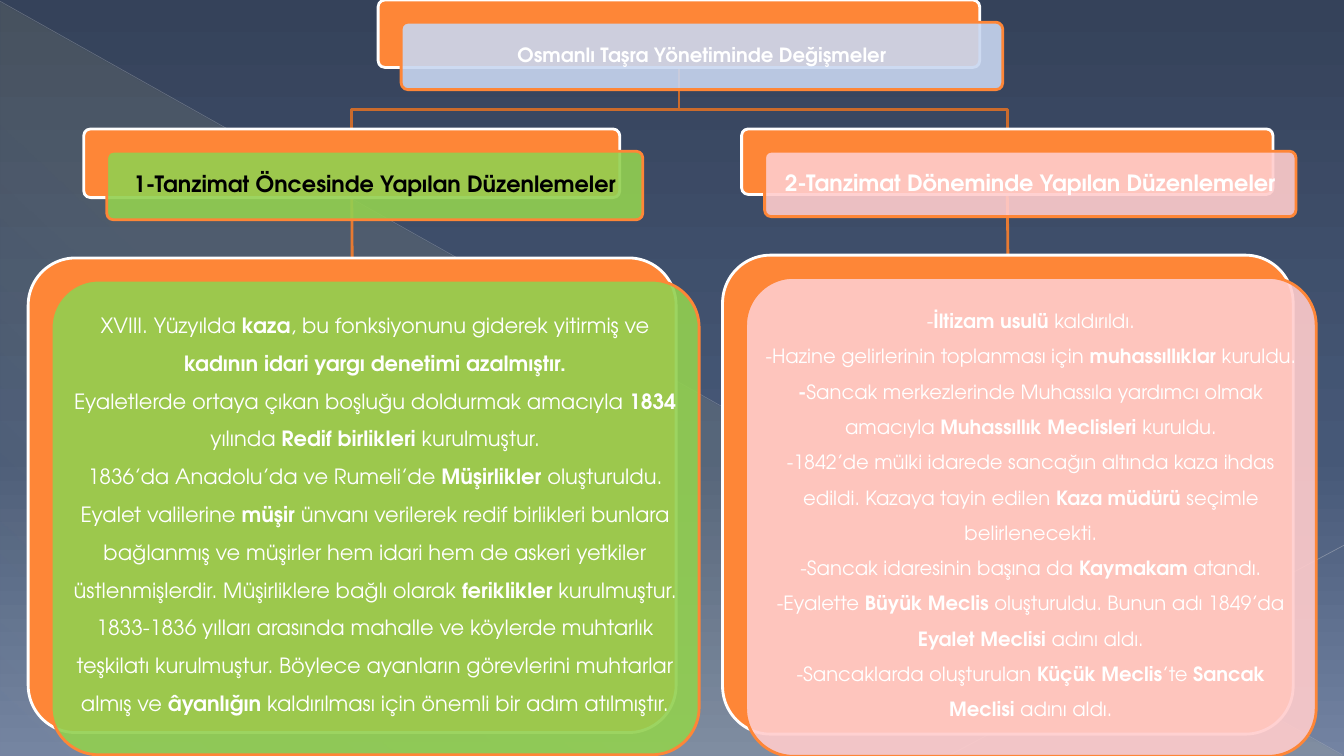
from lxml import etree
from pptx import Presentation
from pptx.dml.color import RGBColor
from pptx.enum import shapes, text
from pptx.oxml import ns
from pptx.util import Cm, Pt

FONT = "TeX Gyre Adventor"
COLORS = {
    "orange": "FE8637", "white": "FFFFFF", "black": "000000", "blue": "C8D6F0",
    "green": "92D050", "pink": "FFCCCC", "upper_link": "CB6B2C", "lower_link": "E77A32",
    "long_line": "BABDC4", "short_line": "C1C4CA",
}
# Gradient stops: position %, colour, opacity %
BACKGROUND = [(0, "35425A", 100), (60, "465877", 100), (100, "7383A2", 100)]
CORNER = [(0, "FFF39D", 10), (70, "FFF39D", 8), (100, "FFF39D", 1)]

# Content: asterisks enclose bold words, boxes are (left, top, width, height) in cm
TITLE = "*Osmanlı Taşra Yönetiminde Değişmeler*"
TITLE_BOX = (9.53, 0, 15.16, 1.7)
BRANCHES = [
    {
        "heading": "*1-Tanzimat Öncesinde Yapılan Düzenlemeler*",
        "heading_box": (2.11, 3.25, 13.51, 1.73), "heading_color": "black",
        "body_box": (0.71, 6.5, 16.33, 11.96), "fill": "green", "size": 15,
        "body": [
            "XVIII. Yüzyılda *kaza*, bu fonksiyonunu giderek yitirmiş ve "
            "*kadının idari yargı denetimi azalmıştır.*",
            "Eyaletlerde ortaya çıkan boşluğu doldurmak amacıyla *1834* yılında "
            "*Redif birlikleri *kurulmuştur.",
            "1836’da Anadolu’da ve Rumeli’de *Müşirlikler *oluşturuldu. Eyalet valilerine "
            "*müşir *ünvanı verilerek redif birlikleri bunlara bağlanmış ve müşirler hem "
            "idari hem de askeri yetkiler üstlenmişlerdir. Müşirliklere bağlı olarak "
            "*feriklikler *kurulmuştur.",
            "1833-1836 yılları arasında mahalle ve köylerde muhtarlık teşkilatı kurulmuştur. "
            "Böylece ayanların görevlerini muhtarlar almış ve *âyanlığın* kaldırılması için "
            "önemli bir adım atılmıştır.",
        ],
    },
    {
        "heading": "*2-Tanzimat Döneminde Yapılan Düzenlemeler*",
        "heading_box": (18.69, 3.25, 13.39, 1.65), "heading_color": "white",
        "body_box": (18.21, 6.43, 14.38, 12.07), "fill": "pink", "size": 14,
        "body": [
            "-*İltizam usulü* kaldırıldı.",
            "-Hazine gelirlerinin toplanması için *muhassıllıklar* kuruldu.",
            "*-*Sancak merkezlerinde Muhassıla yardımcı olmak amacıyla "
            "*Muhassıllık Meclisleri* kuruldu.",
            "-1842’de mülki idarede sancağın altında kaza ihdas edildi. Kazaya tayin edilen "
            "*Kaza müdürü *seçimle belirlenecekti.",
            "-Sancak idaresinin başına da *Kaymakam* atandı.",
            "-Eyalette *Büyük Meclis* oluşturuldu. Bunun adı 1849’da *Eyalet Meclisi* adını aldı.",
            "-Sancaklarda oluşturulan *Küçük Meclis*’te *Sancak Meclisi* adını aldı.",
        ],
    },
]
SLIDE_W, SLIDE_H = 33.87, 19.05
OFFSET_X, OFFSET_Y = 0.58, 0.56
BEND_Y = 2.77


def rgb(name):
    return RGBColor.from_string(COLORS[name])


def set_opacity(fill_parent, percent):
    color = fill_parent.find(ns.qn("a:solidFill"))[0]
    etree.SubElement(color, ns.qn("a:alpha")).set("val", str(percent * 1000))


def set_gradient(fill, parent, stops, angle):
    fill.gradient()
    grad = parent.find(ns.qn("a:gradFill"))
    for child in list(grad):
        grad.remove(child)
    stop_list = etree.SubElement(grad, ns.qn("a:gsLst"))
    for position, color, opacity in stops:
        stop = etree.SubElement(stop_list, ns.qn("a:gs"), pos=str(position * 1000))
        value = etree.SubElement(stop, ns.qn("a:srgbClr"), val=color)
        etree.SubElement(value, ns.qn("a:alpha"), val=str(opacity * 1000))
    etree.SubElement(grad, ns.qn("a:lin"), ang=str(angle * 60000), scaled="0")


def write(shape, paragraphs, size, color="white", spacing=0.9, inset=0.15,
          anchor=text.MSO_ANCHOR.MIDDLE):
    frame = shape.text_frame
    frame.word_wrap = True
    frame.auto_size = text.MSO_AUTO_SIZE.NONE
    frame.vertical_anchor = anchor
    frame.margin_left = frame.margin_right = Cm(inset)
    frame.margin_top = frame.margin_bottom = Cm(inset)
    for index, line in enumerate(paragraphs):
        para = frame.paragraphs[0] if index == 0 else frame.add_paragraph()
        para.alignment = text.PP_ALIGN.CENTER
        para.line_spacing = spacing
        para.space_before = para.space_after = Pt(0)
        for number, part in enumerate(line.split("*")):
            if part:
                run = para.add_run()
                run.text = part
                run.font.name, run.font.size = FONT, Pt(size)
                run.font.bold = number % 2 == 1
                run.font.color.rgb = rgb(color)


def rounded(box, fill, line):
    card = slide.shapes.add_shape(shapes.MSO_SHAPE.ROUNDED_RECTANGLE, *map(Cm, box))
    card.adjustments[0] = 0.1
    card.shadow.inherit = False
    card.fill.solid()
    card.fill.fore_color.rgb = rgb(fill)
    card.line.color.rgb = rgb(line)
    card.line.width = Pt(2)
    return card


def layered(box, fill):
    """Draws the orange card and the translucent one in front, which it returns."""
    rounded(box, "orange", "white")
    left, top, width, height = box
    front = rounded((left + OFFSET_X, top + OFFSET_Y, width, height), fill, "orange")
    set_opacity(front._element.spPr, 90)
    return front


def straight(start, end, color, width, opacity=100):
    line = slide.shapes.add_connector(
        shapes.MSO_CONNECTOR.STRAIGHT, *map(Cm, start + end))
    line.line.color.rgb = rgb(color)
    line.line.width = Pt(width)
    set_opacity(line.line._ln, opacity)
    etree.SubElement(line._element.spPr, ns.qn("a:effectLst"))


def elbow(start, end):
    points = [(start[0], BEND_Y), (end[0], BEND_Y), end]
    builder = slide.shapes.build_freeform(Cm(start[0]), Cm(start[1]))
    builder.add_line_segments([(Cm(x), Cm(y)) for x, y in points], close=False)
    link = builder.convert_to_shape()
    link.shadow.inherit = False
    link.fill.background()
    link.line.color.rgb = rgb("upper_link")
    link.line.width = Pt(2)


def top_middle(box):
    return box[0] + box[2] / 2, box[1]


def bottom_middle(box):
    return box[0] + box[2] / 2, box[1] + box[3]


prs = Presentation()
prs.slide_width, prs.slide_height = Cm(SLIDE_W), Cm(SLIDE_H)
slide = prs.slides.add_slide(prs.slide_layouts[5])

# Background with its corner triangle and thin lines
backdrop = slide.background.fill
set_gradient(backdrop, slide._element.cSld.bg.bgPr, BACKGROUND, 90)
corner = slide.shapes.add_shape(
    shapes.MSO_SHAPE.RIGHT_TRIANGLE, 0, Cm(0.04), Cm(33.82), Cm(19))
corner.shadow.inherit = False
corner.line.fill.background()
set_gradient(corner.fill, corner._element.spPr, CORNER, 133)
straight((0, 0.03), (33.83, 19.02), "long_line", 0.39, 35)
straight((SLIDE_W, 13.74), (23.95, 19.02), "short_line", 0.47, 45)

# Links between the levels
for branch in BRANCHES:
    straight(bottom_middle(branch["heading_box"]), top_middle(branch["body_box"]),
             "lower_link", 2)
    elbow(bottom_middle(TITLE_BOX), top_middle(branch["heading_box"]))

# Title, placed over its card
title_card = layered(TITLE_BOX, "blue")
title = slide.shapes.title
title.left, title.top = title_card.left, title_card.top
title.width, title.height = title_card.width, title_card.height
write(title, [TITLE], 14)
title_card._element.addnext(title._element)

# Headings and bodies
for branch in BRANCHES:
    heading = layered(branch["heading_box"], branch["fill"])
    write(heading, [branch["heading"]], 16, color=branch["heading_color"], inset=0.18)
    body = layered(branch["body_box"], branch["fill"])
    write(body, branch["body"], branch["size"], spacing=1.5, anchor=text.MSO_ANCHOR.TOP)

prs.save("out.pptx")
